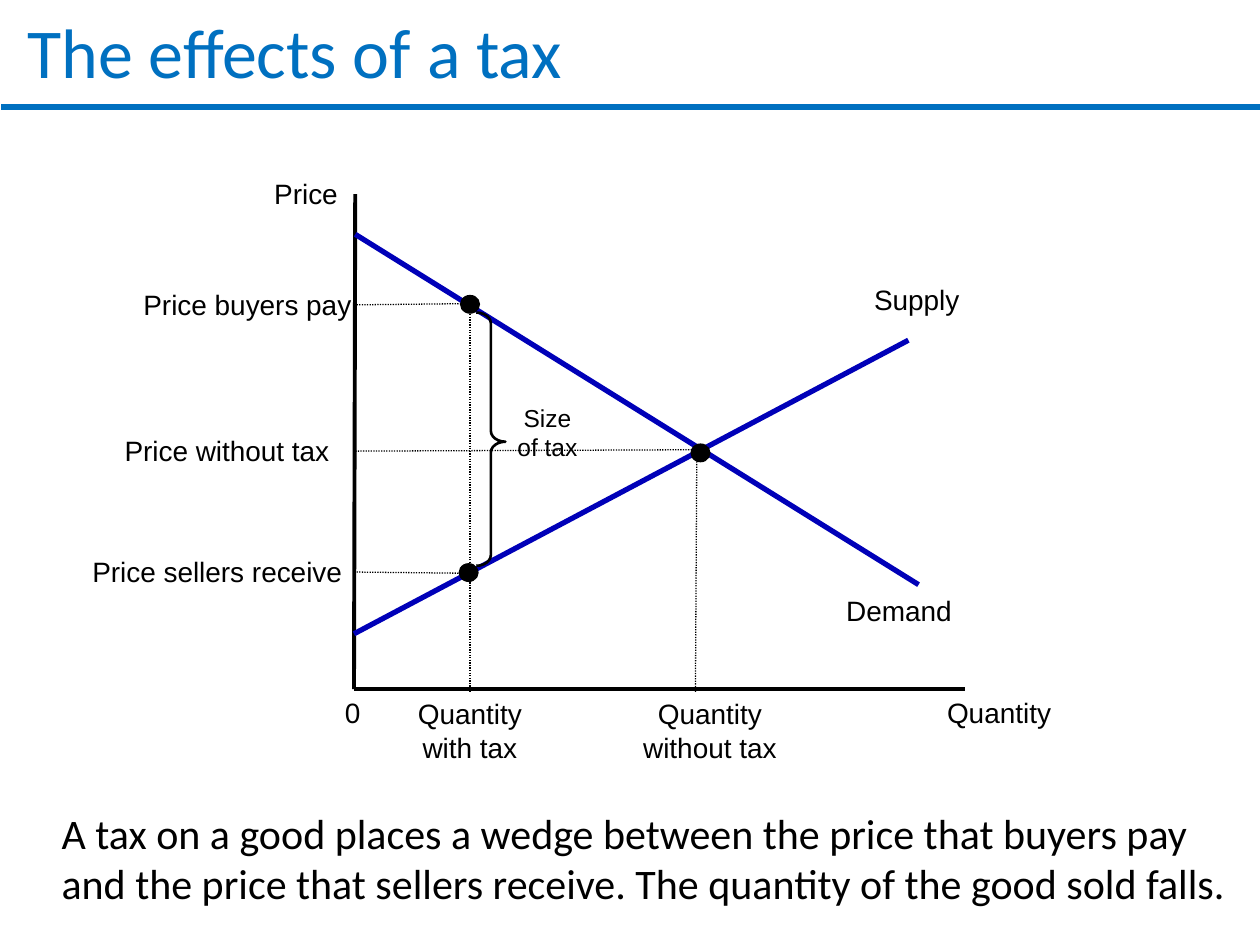
from dataclasses import dataclass

from lxml.etree import SubElement
from pptx import Presentation
from pptx.dml.color import RGBColor as RGB
from pptx.enum.dml import MSO_LINE as Dash
from pptx.enum.shapes import MSO_CONNECTOR as Link, MSO_SHAPE as Kind
from pptx.enum.text import MSO_ANCHOR as Anchor, MSO_AUTO_SIZE as Fit, PP_ALIGN as Align
from pptx.oxml.ns import qn
from pptx.util import Pt


@dataclass(frozen=True)
class Theme:
    blue: RGB = RGB(0x00, 0x70, 0xC0)
    curve: RGB = RGB(0x00, 0x00, 0xB8)
    ink: RGB = RGB(0, 0, 0)
    paper: RGB = RGB(255, 255, 255)
    head: str = "Calibri"
    plain: str = "Arial"
    title: int = 40
    body: int = 24
    label: int = 16
    small: int = 14


class Deck:
    def __init__(self, theme):
        self.theme = theme
        self.file = Presentation()
        self.file.slide_width, self.file.slide_height = Pt(720), Pt(540)
        self.slide = self.file.slides.add_slide(self.file.slide_layouts[5])
        self.shapes = self.slide.shapes

    def style(self, frame, text, face, size, color, align):
        """Fill a text frame and format its paragraphs."""
        frame.text = text
        frame.vertical_anchor = Anchor.TOP
        for para in frame.paragraphs:
            para.alignment = align
            para.font.name, para.font.size = face, Pt(size)
            para.font.color.rgb = color

    def title(self, text, x, y, w, h):
        t, box = self.theme, self.shapes.title
        box.left, box.top, box.width, box.height = map(Pt, (x, y, w, h))
        self.style(box.text_frame, text, t.head, t.title, t.blue, Align.LEFT)
        box.text_frame.auto_size = Fit.NONE

    def text(self, text, x, y, w, h=26.6, align=Align.CENTER, wrap=False,
             size=None, face=None):
        t = self.theme
        frame = self.shapes.add_textbox(*map(Pt, (x, y, w, h))).text_frame
        frame.word_wrap = wrap
        frame.auto_size = Fit.SHAPE_TO_FIT_TEXT
        self.style(frame, text, face or t.plain, size or t.label, t.ink, align)

    def line(self, x1, y1, x2, y2, color, width, dash=None):
        link = self.shapes.add_connector(Link.STRAIGHT, *map(Pt, (x1, y1, x2, y2)))
        link.line.color.rgb, link.line.width = color, Pt(width)
        if dash:
            link.line.dash_style = dash
        SubElement(link._element.spPr, qn("a:effectLst"))

    def guide(self, *ends):
        self.line(*ends, self.theme.ink, 0.75, Dash.ROUND_DOT)

    def shape(self, kind, x, y, w, h, fill=None, edge=None, width=1):
        item = self.shapes.add_shape(kind, *map(Pt, (x, y, w, h)))
        item.shadow.inherit = False
        if fill is None:
            item.fill.background()
        else:
            item.fill.solid()
            item.fill.fore_color.rgb = fill
        if edge is None:
            item.line.fill.background()
        else:
            item.line.color.rgb, item.line.width = edge, Pt(width)
        return item

    def dot(self, x, y, w=11.5, h=10.8):
        """Draw a point of the graph, centred on x and y."""
        self.shape(Kind.OVAL, x - w / 2, y - h / 2, w, h, self.theme.ink)

    def brace(self, x, y, w, h):
        """Draw a brace that points right."""
        item = self.shape(Kind.LEFT_BRACE, x, y, w, h, edge=self.theme.ink, width=1.5)
        item.rotation = 180
        item.adjustments[0], item.adjustments[1] = 0.37, 0.49


def main():
    t = Theme()
    deck = Deck(t)
    left, right = Align.LEFT, Align.RIGHT

    deck.line(0.7, 61.2, 720, 61.2, t.blue, 3)
    deck.title("The effects of a tax", 8.6, 1.4, 711.4, 41.8)

    # Axes
    deck.shape(Kind.RECTANGLE, 203, 116.6, 348.5, 275.8, t.paper, t.paper, 2)
    deck.line(203, 110.9, 202.3, 393.8, t.ink, 2.25)
    deck.line(202.3, 393.8, 551.5, 393.8, t.ink, 2.25)
    deck.text("Price", 141.8, 97.2, 58.3, align=right, wrap=True)
    deck.text("Quantity", 509.8, 393.8, 97.9, align=right, wrap=True)
    deck.text("0", 190, 393.8, 23.8, align=left)

    # Curves
    deck.line(203, 133.9, 524.9, 334.1, t.curve, 3)
    deck.text("Demand", 475.9, 335.5, 75.6)
    deck.line(202.3, 362.2, 519.1, 194.4, t.curve, 3)
    deck.text("Supply", 491.8, 157.7, 64.1)

    # Prices
    deck.guide(203.8, 174.2, 268.6, 173.5)
    deck.text("Price buyers pay", 74.9, 160.6, 134.6, align=left)
    deck.guide(203, 257.8, 398.2, 257)
    deck.text("Price without tax", 64.1, 244.1, 137.5, align=left)
    deck.guide(203.8, 326.9, 268.6, 327.6)
    deck.text("Price sellers receive", 44.6, 313.2, 159.1)

    # Tax wedge
    deck.text("Size\nof tax", 288, 226.8, 49.7, 41, wrap=True, size=t.small)
    deck.brace(272.2, 178.6, 16.6, 144.7)
    for spot in ((400.3, 258.8), (268.6, 173.9), (267.8, 327.2)):
        deck.dot(*spot)

    deck.text("A tax on a good places a wedge between the price that buyers pay "
              "and the price that sellers receive. The quantity of the good sold falls.",
              28.1, 457.9, 682.6, 65.5, left, True, t.body, t.head)

    # Quantities
    deck.guide(268.6, 172.1, 268.6, 395.3)
    deck.text("Quantity\nwith tax", 231.1, 394.6, 74.9, 46.1)
    deck.guide(398.2, 256.3, 397.4, 395.3)
    deck.text("Quantity\nwithout tax", 360, 394.6, 91.4, 46.1)

    deck.file.save("out.pptx")


if __name__ == "__main__":
    main()
